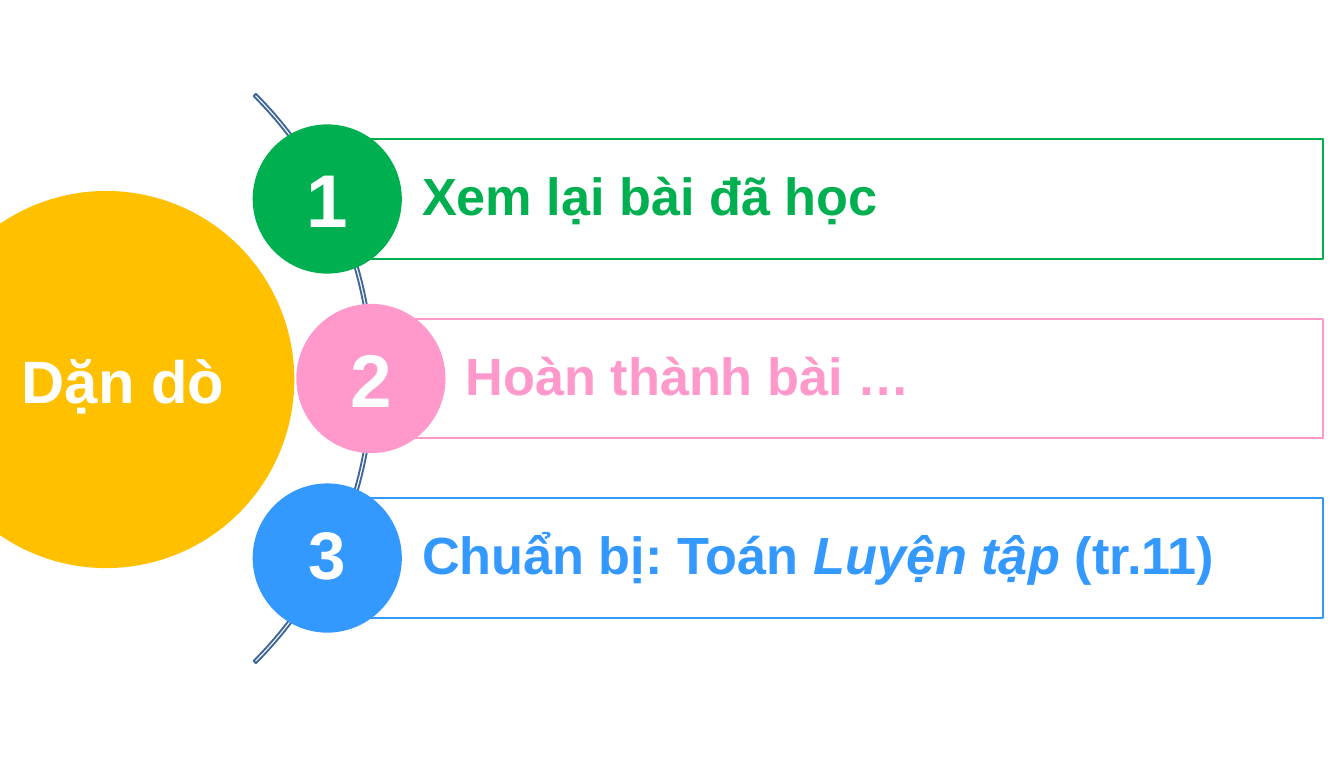
"""Build the closing reminder slide: a title disc, an arc and three numbered tasks."""
from pptx import Presentation
from pptx.dml.color import RGBColor
from pptx.enum.shapes import MSO_SHAPE
from pptx.enum.text import MSO_ANCHOR, PP_ALIGN
from pptx.util import Inches, Pt

OVAL, ARC, RECTANGLE = MSO_SHAPE.OVAL, MSO_SHAPE.BLOCK_ARC, MSO_SHAPE.RECTANGLE
TOP, MIDDLE = MSO_ANCHOR.TOP, MSO_ANCHOR.MIDDLE
LEFT, CENTER = PP_ALIGN.LEFT, PP_ALIGN.CENTER

COLORS = {"title": "FFC000", "arc": "3F6797", "white": "FFFFFF",
          "green": "00B050", "pink": "FF99CC", "blue": "3399FF"}

TITLE = "Dặn dò"
TASKS = [
    {"color": "green", "left": 4.87, "number_size": 80,
     "runs": [("Xem lại bài đã học", False)]},
    {"color": "pink", "left": 5.52, "number_size": 80,
     "runs": [("Hoàn thành bài …", False)]},
    {"color": "blue", "left": 4.87, "number_size": 72,
     "runs": [("Chuẩn bị: Toán ", False), ("Luyện tập ", True), ("(tr.11)", False)]},
]

BAR_TOP, BAR_PITCH, BAR_HEIGHT, BAR_RIGHT = 2.07, 2.67, 1.78, 19.69
DISC = 2.22
DISC_MARGINS = (0.2, 0.1, 0.2, 0.1)
TITLE_MARGINS = (0.5, 0.1, 0, 0.1)
BAR_MARGINS = (1.41, 0.16, 0.16, 0.16)


def rgb(name):
    return RGBColor.from_string(COLORS[name])


def add_part(slide, kind, box, fill=None, line=None):
    part = slide.shapes.add_shape(kind, *map(Inches, box))
    part.shadow.inherit = False
    if fill:
        part.fill.solid()
        part.fill.fore_color.rgb = rgb(fill)
    else:
        part.fill.background()
    if line:
        part.line.color.rgb = rgb(line)
        part.line.width = Pt(2)
    else:
        part.line.fill.background()
    return part


def write(part, runs, size, color, margins, anchor=MIDDLE, align=CENTER, spacing=1.0):
    frame = part.text_frame
    sides = ("margin_left", "margin_top", "margin_right", "margin_bottom")
    layout = dict(zip(sides, map(Inches, margins)))
    layout.update(word_wrap=True, vertical_anchor=anchor)
    for key, value in layout.items():
        setattr(frame, key, value)
    paragraph = frame.paragraphs[0]
    paragraph.alignment = align
    paragraph.line_spacing = spacing
    for text, italic in runs:
        run = paragraph.add_run()
        run.text = text
        run.font.color.rgb = rgb(color)
        style = {"name": "Arial", "size": Pt(size), "bold": True, "italic": italic}
        for key, value in style.items():
            setattr(run.font, key, value)


def add_task(slide, index, task):
    color, left = task["color"], task["left"]
    top = BAR_TOP + index * BAR_PITCH
    bar = add_part(slide, RECTANGLE, (left, top, BAR_RIGHT - left, BAR_HEIGHT), line=color)
    write(bar, task["runs"], 56, color, BAR_MARGINS, align=LEFT, spacing=0.9)
    disc_top = top + (BAR_HEIGHT - DISC) / 2
    disc = add_part(slide, OVAL, (left - DISC / 2, disc_top, DISC, DISC), fill=color)
    write(disc, [(str(index + 1), False)], task["number_size"], "white", DISC_MARGINS, anchor=TOP)


def main():
    deck = Presentation()
    deck.slide_width, deck.slide_height = Inches(20), Inches(11.26)
    slide = deck.slides.add_slide(deck.slide_layouts[6])

    title = add_part(slide, OVAL, (-1.22, 2.84, 5.6, 5.61), fill="title")
    write(title, [(TITLE, False)], 64, "white", TITLE_MARGINS)

    arc = add_part(slide, ARC, (-6.41, -0.36, 11.97, 11.98), line="arc")
    for position, value in enumerate((189, 27, 0.004)):
        arc.adjustments[position] = value

    for index, task in enumerate(TASKS):
        add_task(slide, index, task)
    deck.save("out.pptx")


if __name__ == "__main__":
    main()
